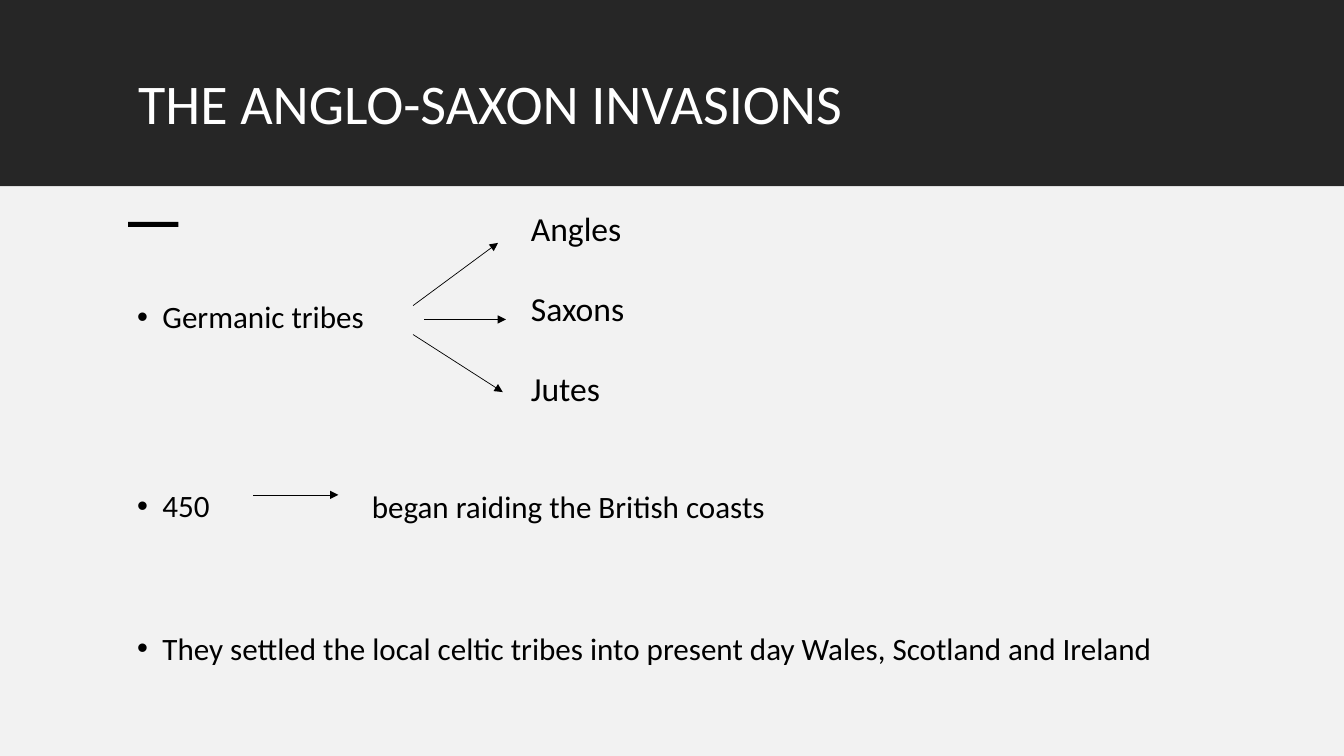
"""Build the slide on the Anglo-Saxon invasions."""
from pptx import Presentation
from pptx.dml.color import RGBColor
from pptx.enum.shapes import MSO_CONNECTOR as Connector, MSO_SHAPE as Shape
from pptx.enum.text import MSO_ANCHOR as Anchor, MSO_AUTO_SIZE as AutoSize, PP_ALIGN as Align
from pptx.oxml.ns import qn
from pptx.util import Cm, Pt
from lxml.etree import SubElement

COLORS = {"band": "262626", "panel": "F2F2F2", "ink": "000000", "title": "FFFFFF"}
FONT = "Calibri"

TITLE = "THE ANGLO-SAXON INVASIONS"
FACTS = [
    ("Germanic tribes", 0),
    ("450", 111),
    ("They settled the local celtic tribes into present day Wales, Scotland and Ireland", 78),
]
TRIBES = [("Angles", 0), ("Saxons", 28.4), ("Jutes", 28.4)]
RAIDS = [("began raiding the British coasts", 0)]

WIDTH, HEIGHT, BAND_HEIGHT = 33.87, 19.05, 4.7
BLOCKS = [
    ((0, 0, WIDTH, BAND_HEIGHT), "band"),
    ((0, BAND_HEIGHT, WIDTH, HEIGHT - BAND_HEIGHT), "panel"),
    ((3.23, 5.59, 1.27, 0.13), "ink"),
]
ARROWS = [
    (10.41, 7.7, 12.55, 6.12),
    (10.69, 8.05, 12.75, 8.05),
    (10.41, 8.43, 12.67, 9.88),
    (6.38, 12.47, 8.53, 12.47),
]
TITLE_BOX = (3.23, 1.78, 27.46, 2.49)
FACTS_BOX = (3.2, 6.15, 27.46, 11)
TRIBES_BOX = (13.13, 5.11, 4.78, 5.38)
RAIDS_BOX = (9.37, 12.28, 11, 0.95)


def color(name):
    return RGBColor.from_string(COLORS[name])


def set_all(target, values):
    for name, value in values.items():
        setattr(target, name, value)


def place(shape, box):
    set_all(shape, dict(zip(("left", "top", "width", "height"), map(Cm, box))))


def write(shape, lines, size, ink, frame_format, spacing=1.0):
    frame = shape.text_frame
    base = {"word_wrap": True, "auto_size": AutoSize.NONE, "vertical_anchor": Anchor.TOP}
    set_all(frame, base | frame_format)
    frame.text = "\n".join(text for text, gap in lines)
    for paragraph, (text, gap) in zip(frame.paragraphs, lines):
        set_all(paragraph, {"alignment": Align.LEFT, "line_spacing": spacing,
                            "space_before": Pt(gap), "space_after": Pt(0)})
        run = paragraph.runs[0]
        set_all(run.font, {"name": FONT, "size": Pt(size)})
        run.font.color.rgb = color(ink)


def add_block(slide, box, fill):
    shape = slide.shapes.add_shape(Shape.RECTANGLE, *map(Cm, box))
    shape.shadow.inherit = False
    shape.fill.solid()
    shape.fill.fore_color.rgb = color(fill)
    shape.line.fill.background()
    slide.shapes.title.element.addprevious(shape.element)


def add_arrow(slide, ends):
    arrow = slide.shapes.add_connector(Connector.STRAIGHT, *map(Cm, ends))
    arrow.line.width = Pt(0.5)
    arrow.line.color.rgb = color("ink")
    SubElement(arrow.line._get_or_add_ln(), qn("a:tailEnd"), type="triangle")
    SubElement(arrow.element.spPr, qn("a:effectLst"))


def main():
    presentation = Presentation()
    set_all(presentation, {"slide_width": Cm(WIDTH), "slide_height": Cm(HEIGHT)})
    slide = presentation.slides.add_slide(presentation.slide_layouts[1])

    for box, fill in BLOCKS:
        add_block(slide, box, fill)

    title, facts = slide.placeholders
    place(title, TITLE_BOX)
    write(title, [(TITLE, 0)], 40, "title", {}, 0.9)

    place(facts, FACTS_BOX)
    write(facts, FACTS, 22.2, "ink", {"margin_top": Cm(1.45)}, 0.9)
    for paragraph in facts.text_frame.paragraphs:
        properties = paragraph._p.get_or_add_pPr()
        properties.set("marL", str(Cm(0.64)))
        properties.set("indent", str(Cm(-0.64)))

    tribes = slide.shapes.add_textbox(*map(Cm, TRIBES_BOX))
    write(tribes, TRIBES, 24, "ink", {})

    raids = slide.shapes.add_textbox(*map(Cm, RAIDS_BOX))
    write(raids, RAIDS, 22.2, "ink", {"margin_left": 0, "margin_top": 0})

    for ends in ARROWS:
        add_arrow(slide, ends)
    presentation.save("out.pptx")


if __name__ == "__main__":
    main()
